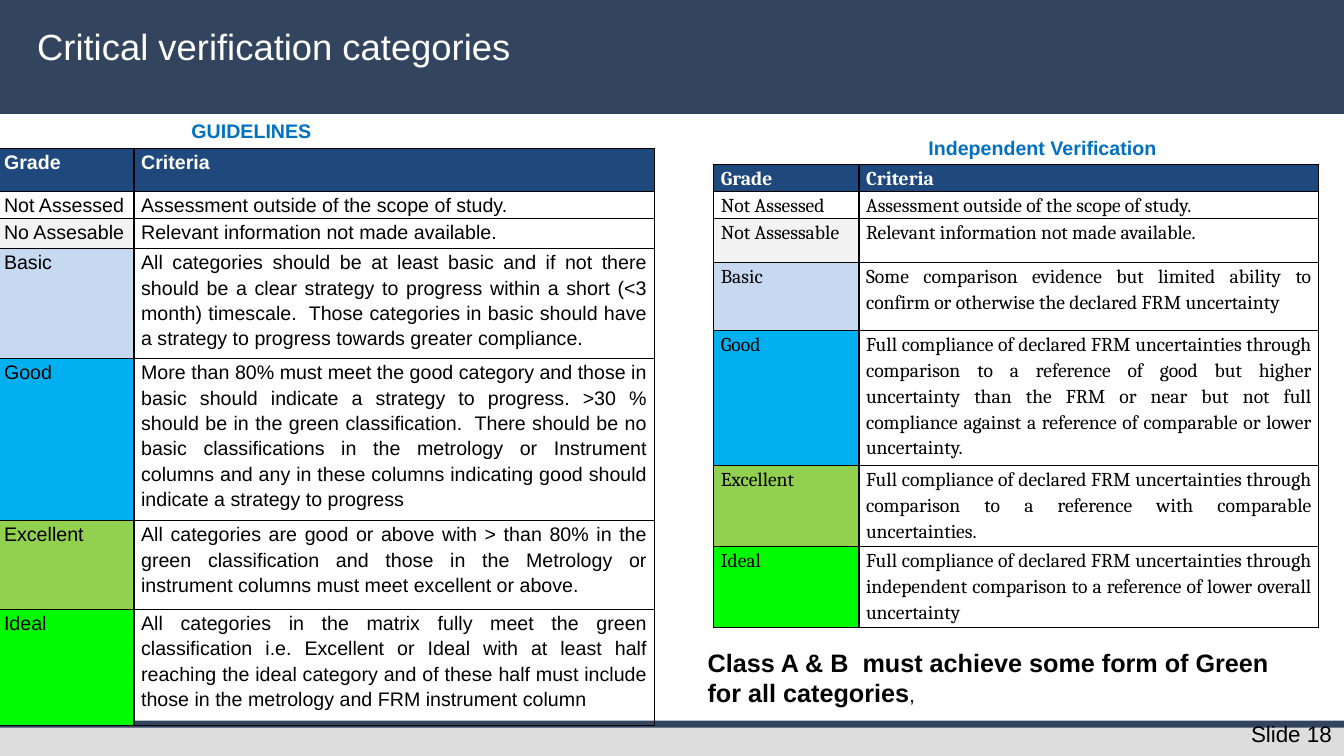
from dataclasses import dataclass

from lxml import etree
from pptx import Presentation
from pptx import util as u
from pptx.dml.color import RGBColor
from pptx.enum import shapes, text
from pptx.oxml.ns import qn


@dataclass(frozen=True)
class Theme:
    font: str = "Arial"
    serif: str = "Cambria"
    navy: str = "33445F"
    footer: str = "DDDDDD"
    header: str = "1F497D"
    caption: str = "0070C0"
    white: str = "FFFFFF"
    black: str = "000000"
    grades: tuple = (None, "F2F2F2", "C6D9F1", "00B0F0", "92D050", "00FA00")
    title_size: int = 26
    note_size: int = 18
    number_size: int = 16
    body_size: int = 14


THEME = Theme()

GUIDELINES = [
    ("Not Assessed", "Assessment outside of the scope of study."),
    ("No Assesable", "Relevant information not made available."),
    ("Basic", "All categories should be at least basic and if not there should be a clear "
     "strategy to progress within a short (<3 month) timescale.  Those categories in basic "
     "should have a strategy to progress towards greater compliance."),
    ("Good", "More than 80% must meet the good category and those in basic should indicate "
     "a strategy to progress. >30 % should be in the green classification.  There should be "
     "no basic classifications in the metrology or Instrument columns and any in these "
     "columns indicating good should indicate a strategy to progress"),
    ("Excellent", "All categories are good or above with > than 80% in the green "
     "classification and those in the Metrology or instrument columns must meet excellent "
     "or above."),
    ("Ideal", "All categories in the matrix fully meet the green classification i.e. "
     "Excellent or Ideal with at least half reaching the ideal category and of these half "
     "must include those in the metrology and FRM instrument column"),
]

VERIFICATION = [
    ("Not Assessed", "Assessment outside of the scope of study."),
    ("Not Assessable", "Relevant information not made available."),
    ("Basic", "Some comparison evidence but limited ability to confirm or otherwise the "
     "declared FRM uncertainty"),
    ("Good", "Full compliance of declared FRM uncertainties through comparison to a "
     "reference of good but higher uncertainty than the FRM or near but not full compliance "
     "against a reference of comparable or lower uncertainty."),
    ("Excellent", "Full compliance of declared FRM uncertainties through comparison to a "
     "reference with comparable uncertainties."),
    ("Ideal", "Full compliance of declared FRM uncertainties through independent comparison "
     "to a reference of lower overall uncertainty"),
]


def inches(box):
    return [u.Inches(length) for length in box]


def style(run, size, color, bold=False, font=THEME.font):
    run.font.name = font
    run.font.size = u.Pt(size)
    run.font.bold = bold
    run.font.color.rgb = RGBColor.from_string(color)


def add_band(slide, box, color):
    band = slide.shapes.add_shape(shapes.MSO_SHAPE.RECTANGLE, *inches(box))
    band.shadow.inherit = False
    band.fill.solid()
    band.fill.fore_color.rgb = RGBColor.from_string(color)
    band.line.fill.background()


def add_label(slide, box, words, size, color, bold=False, wrap=True):
    label = slide.shapes.add_textbox(*inches(box))
    frame = label.text_frame
    frame.word_wrap = wrap
    frame.auto_size = text.MSO_AUTO_SIZE.SHAPE_TO_FIT_TEXT
    frame.text = words
    style(frame.paragraphs[0].runs[0], size, color, bold)
    return frame.paragraphs[0]


def add_borders(cell):
    properties = cell._tc.get_or_add_tcPr()
    for side in ("a:lnL", "a:lnR", "a:lnT", "a:lnB"):
        line = etree.SubElement(properties, qn(side), w=str(u.Pt(1)))
        fill = etree.SubElement(line, qn("a:solidFill"))
        etree.SubElement(fill, qn("a:srgbClr"), val=THEME.black)


def fill_cell(cell, words, font, color, fill, bold):
    add_borders(cell)
    if fill:
        cell.fill.solid()
        cell.fill.fore_color.rgb = RGBColor.from_string(fill)
    else:
        cell.fill.background()
    cell.margin_left = cell.margin_right = u.Inches(0.07)
    cell.margin_top = cell.margin_bottom = 0
    cell.text = words
    paragraph = cell.text_frame.paragraphs[0]
    paragraph.alignment = text.PP_ALIGN.JUSTIFY
    paragraph.line_spacing = 1.15
    paragraph.space_after = u.Pt(10)
    style(paragraph.runs[0], THEME.body_size, color, bold, font)


def add_grades(slide, left, top, widths, heights, criteria, font):
    """Draw a grade table with a header row and one colour per grade."""
    box = inches((left, top, sum(widths), sum(heights)))
    table = slide.shapes.add_table(len(heights), len(widths), *box).table
    table.first_row = table.horz_banding = False
    for column, width in zip(table.columns, widths):
        column.width = u.Inches(width)
    for row, height in zip(table.rows, heights):
        row.height = u.Inches(height)
    for column, heading in enumerate(("Grade", "Criteria")):
        fill_cell(table.cell(0, column), heading, font, THEME.white, THEME.header, True)
    for row, ((grade, criterion), fill) in enumerate(zip(criteria, THEME.grades), 1):
        fill_cell(table.cell(row, 0), grade, font, THEME.black, fill, False)
        fill_cell(table.cell(row, 1), criterion, font, THEME.black, None, False)


def add_caption(slide, left, top, words):
    add_label(slide, (left, top, 4.44, 0.34), words, THEME.body_size, THEME.caption, True)


def add_frame(slide, width, height):
    """Draw the title band, the footer and the slide number."""
    add_band(slide, (0, 0, width, 1.13), THEME.navy)
    add_band(slide, (0, height - 0.31, width, 0.31), THEME.footer)
    add_band(slide, (0, height - 0.35, width, 0.07), THEME.navy)
    add_label(slide, (width - 1.02, height - 0.4, 1.04, 0.37), "Slide 18",
              THEME.number_size, THEME.black, wrap=False)
    add_label(slide, (0.27, 0.19, 9.48, 0.54), "Critical verification categories",
              THEME.title_size, THEME.white)


def add_guidelines(slide, left, top):
    add_caption(slide, left + 1.83, top - 0.34, "GUIDELINES")
    add_grades(slide, left, top, (1.36, 5.16),
               (0.43, 0.24, 0.3, 1.09, 1.55, 0.88, 1.15), GUIDELINES, THEME.font)


def add_verification(slide, left, top):
    add_caption(slide, left + 2.03, top - 0.33, "Independent Verification")
    add_grades(slide, left, top, (1.44, 4.56),
               (0.21, 0.21, 0.44, 0.67, 1.12, 0.67, 0.67), VERIFICATION, THEME.serif)
    note = add_label(slide, (left - 0.16, top + 4.74, 6.16, 0.71),
                     "Class A & B  must achieve some form of Green for all categories",
                     THEME.note_size, THEME.black, True)
    comma = note.add_run()
    comma.text = ","
    style(comma, THEME.body_size, THEME.black)


def main():
    deck = Presentation()
    width, height = 13.33, 7.5
    deck.slide_width, deck.slide_height = inches((width, height))
    slide = deck.slides.add_slide(deck.slide_layouts[6])
    add_frame(slide, width, height)
    add_guidelines(slide, -0.03, 1.47)
    add_verification(slide, 7.08, 1.63)
    deck.save("out.pptx")


if __name__ == "__main__":
    main()
